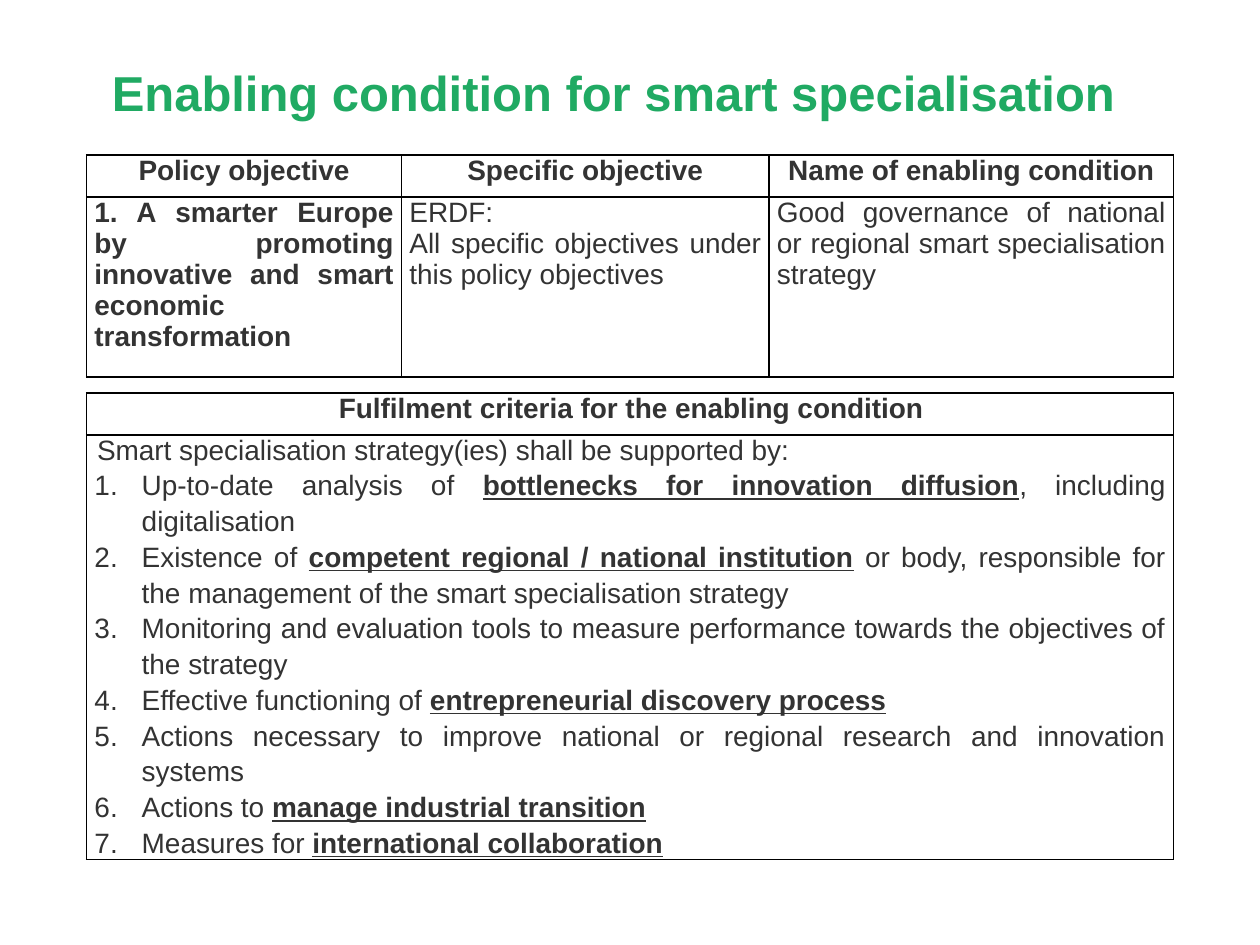
from pptx import Presentation
from pptx.dml.color import RGBColor
from pptx.enum import text as t
from pptx.oxml import parse_xml
from pptx.oxml.ns import nsdecls
from pptx.util import Pt

GREEN = RGBColor(0x20, 0xAA, 0x63)
INK = RGBColor(0x33, 0x33, 0x33)
BLACK = RGBColor(0, 0, 0)
FONT = "Arial"
LEFT, WIDTH = 49.5, 621
CENTER, JUSTIFY = t.PP_ALIGN.CENTER, t.PP_ALIGN.JUSTIFY

OBJECTIVES = [
    ("Policy objective", 180, True,
     ["1. A smarter Europe by promoting innovative and smart economic transformation"]),
    ("Specific objective", 210, False,
     ["ERDF:", "All specific objectives under this policy objectives"]),
    ("Name of enabling condition", 231, False,
     ["Good governance of national or regional smart specialisation strategy"]),
]
CRITERIA = [
    ("Up-to-date analysis of ", "bottlenecks for innovation diffusion", ", including digitalisation"),
    ("Existence of ", "competent regional / national institution",
     " or body, responsible for the management of the smart specialisation strategy"),
    ("Monitoring and evaluation tools to measure performance towards the objectives of the strategy",),
    ("Effective functioning of ", "entrepreneurial discovery process"),
    ("Actions necessary to improve national or regional research and innovation systems",),
    ("Actions to ", "manage industrial transition"),
    ("Measures for ", "international collaboration"),
]


def add_run(p, words, size=16, color=INK, bold=False, underline=None):
    """Add one formatted run to a paragraph."""
    r = p.add_run()
    r.text = words
    r.font.name, r.font.size = FONT, Pt(size)
    r.font.color.rgb = color
    r.font.bold, r.font.underline = bold, underline


def next_paragraph(tf, align):
    """Return the empty first paragraph, or a new one, with its alignment set."""
    p = tf.paragraphs[0] if not tf.paragraphs[0].runs else tf.add_paragraph()
    p.alignment = align
    return p


def indent(p, left, first=0, numbered=False):
    """Set the indents of a paragraph and number it if asked."""
    pPr = p._p.get_or_add_pPr()
    pPr.set("marL", str(Pt(left)))
    pPr.set("indent", str(Pt(first)))
    if numbered:
        pPr.append(parse_xml(f'<a:buAutoNum {nsdecls("a")} type="arabicPeriod"/>'))


def style_cell(cell):
    """Give a cell black borders, no fill and narrow margins."""
    cell.margin_left = cell.margin_right = Pt(4.5)
    cell.margin_top = cell.margin_bottom = 0
    tcPr = cell._tc.get_or_add_tcPr()
    for side in "LRTB":
        tcPr.append(parse_xml(
            f'<a:ln{side} {nsdecls("a")} w="{Pt(1)}"><a:solidFill>'
            f'<a:srgbClr val="{BLACK}"/></a:solidFill></a:ln{side}>'))
    cell.fill.background()


def add_grid(s, top, widths, heights):
    """Add a plain bordered table with the given columns and rows."""
    tbl = s.shapes.add_table(len(heights), len(widths), Pt(LEFT), Pt(top),
                             Pt(sum(widths)), Pt(sum(heights))).table
    tbl.first_row = tbl.horz_banding = False
    for column, width in zip(tbl.columns, widths):
        column.width = Pt(width)
    for row, height in zip(tbl.rows, heights):
        row.height = Pt(height)
    for cell in tbl.iter_cells():
        style_cell(cell)
    return tbl


def add_title(s, left, top, width, height):
    """Place and fill the title."""
    sp = s.shapes.title
    sp.left, sp.top, sp.width, sp.height = Pt(left), Pt(top), Pt(width), Pt(height)
    tf = sp.text_frame
    tf.word_wrap = True
    tf.vertical_anchor = t.MSO_ANCHOR.MIDDLE
    add_run(next_paragraph(tf, CENTER), "Enabling condition for smart specialisation",
            28, GREEN, True)


def add_objectives(s, top):
    """Add the table of objectives and the enabling condition."""
    tbl = add_grid(s, top, [width for _, width, _, _ in OBJECTIVES], [24, 103])
    for i, (heading, _, bold, lines) in enumerate(OBJECTIVES):
        add_run(next_paragraph(tbl.cell(0, i).text_frame, CENTER), heading, bold=True)
        for line in lines:
            add_run(next_paragraph(tbl.cell(1, i).text_frame, JUSTIFY), line, bold=bold)


def add_criteria(s, top):
    """Add the table of numbered fulfilment criteria."""
    tbl = add_grid(s, top, [WIDTH], [24, 242])
    p = next_paragraph(tbl.cell(0, 0).text_frame, CENTER)
    indent(p, 1.5)
    add_run(p, "Fulfilment criteria for the enabling condition", bold=True)
    tf = tbl.cell(1, 0).text_frame
    p = next_paragraph(tf, JUSTIFY)
    indent(p, 1.5)
    add_run(p, "Smart specialisation strategy(ies) shall be supported by:")
    for parts in CRITERIA:
        p = next_paragraph(tf, JUSTIFY)
        indent(p, 27, -27, numbered=True)
        p.line_spacing = 1.15
        for i, words in enumerate(parts):
            key = i == 1
            add_run(p, words, bold=key, underline=key)


def main():
    """Build and save the slide."""
    prs = Presentation()
    prs.slide_width, prs.slide_height = Pt(720), Pt(540)
    s = prs.slides.add_slide(prs.slide_layouts[5])
    add_title(s, 31, 32, 639, 41)
    add_objectives(s, 88.5)
    add_criteria(s, 224.5)
    prs.save("out.pptx")


if __name__ == "__main__":
    main()
